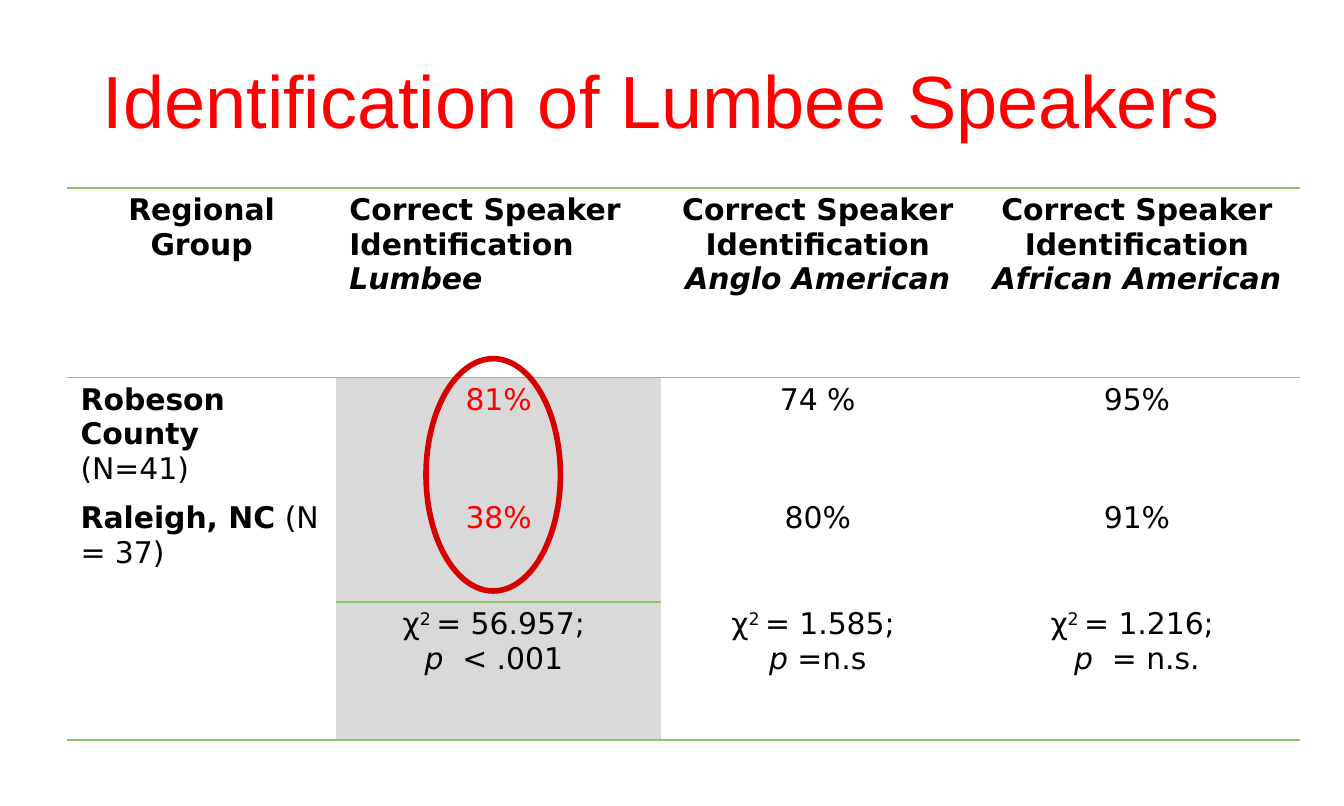
from lxml.etree import SubElement
from pptx import Presentation
from pptx.dml.color import RGBColor as RGB
from pptx.enum.shapes import MSO_SHAPE as SHAPE
from pptx.enum.text import MSO_ANCHOR as ANCHOR, MSO_AUTO_SIZE as AUTO, PP_ALIGN as ALIGN
from pptx.oxml import parse_xml
from pptx.oxml.ns import nsdecls, qn
from pptx.util import Pt

PX = 9144
COLORS = {"red": "FF0000", "ring": "D60000", "rule": "8DC765", "shade": "D9D9D9",
          "text": "000000", "page": "FFFFFF"}
COLS = [200, 242, 233, 242]
ROWS = [141, 88, 79, 103]
LUMBEE = 1


def heading(group):
    return [[("Correct Speaker Identification", "b")], [(group, "bi")]]


def share(text, style=""):
    return [[(text, style)]]


def chi_test(value, result):
    return [[("χ", ""), ("2 ", "^"), (f"= {value}; ", ""), ("\n", ""), ("p", "i"), (result, "")]]


CELLS = [
    [[[("Regional Group", "b")]], heading("Lumbee"), heading("Anglo American"),
     heading("African American")],
    [[[("Robeson County", "b"), ("\n", ""), ("(N=41)", "")]],
     share("81%", "r"), share("74 %"), share("95%")],
    [[[("Raleigh, NC", "b"), (" (N = 37)", "")]],
     share("38%", "r"), share("80%"), share("91%")],
    [[], chi_test("56.957", "  < .001 "), chi_test("1.585", " =n.s"),
     chi_test("1.216", "  = n.s.")],
]
LEFT_CELLS = {(0, 1), (1, 0), (2, 0)}


def color(name):
    return RGB.from_string(COLORS[name])


def place(sp, box):
    sp.left, sp.top, sp.width, sp.height = (v * PX for v in box)


def add_run(p, text, size, font, fill="text"):
    r = p.add_run()
    r.text = text
    r.font.size = Pt(size)
    r.font.name = font
    r.font.color.rgb = color(fill)
    return r


def add_title(s, box):
    sp = s.shapes.title
    place(sp, box)
    tf = sp.text_frame
    tf.word_wrap = True
    tf.auto_size = AUTO.NONE
    tf.vertical_anchor = ANCHOR.MIDDLE
    p = tf.paragraphs[0]
    p.alignment = ALIGN.CENTER
    add_run(p, "Identification of Lumbee Speakers ", 39.6, "Arial", "red")


def fill_text(cell, paragraphs, align):
    tf = cell.text_frame
    for i, runs in enumerate(paragraphs):
        p = tf.add_paragraph() if i else tf.paragraphs[0]
        p.alignment = align
        for text, style in runs:
            if text == "\n":
                p.add_line_break()
                continue
            r = add_run(p, text, 16, "DejaVu Sans", "red" if "r" in style else "text")
            r.font.bold = "b" in style
            r.font.italic = "i" in style
            if "^" in style:
                r.font._element.set("baseline", "30000")


def has_rule(edge, col):
    return edge in (0, 1, len(ROWS)) or (edge == 3 and col == LUMBEE)


def set_borders(cell, top, bottom):
    tc_pr = cell._tc.get_or_add_tcPr()
    sides = [("L", False), ("R", False), ("T", top), ("B", bottom)]
    for i, (side, shown) in enumerate(sides):
        ln = parse_xml(f'<a:ln{side} {nsdecls("a")} w="12700"/>')
        if shown:
            SubElement(SubElement(ln, qn("a:solidFill")), qn("a:srgbClr"), val=COLORS["rule"])
        else:
            SubElement(ln, qn("a:noFill"))
        tc_pr.insert(i, ln)


def add_results(s, box):
    frame = s.shapes.add_table(len(ROWS), len(COLS), *(v * PX for v in box))
    table = frame.table
    table.first_row = table.horz_banding = False
    for col, width in zip(table.columns, COLS):
        col.width = width * PX
    for row, height in zip(table.rows, ROWS):
        row.height = height * PX
    for r, row in enumerate(CELLS):
        for c, paragraphs in enumerate(row):
            cell = table.cell(r, c)
            cell.margin_left = cell.margin_right = 10 * PX
            cell.margin_top = cell.margin_bottom = 4 * PX
            if r and c == LUMBEE:
                cell.fill.solid()
                cell.fill.fore_color.rgb = color("shade")
            else:
                cell.fill.background()
            set_borders(cell, has_rule(r, c), has_rule(r + 1, c))
            fill_text(cell, paragraphs, ALIGN.LEFT if (r, c) in LEFT_CELLS else ALIGN.CENTER)


def add_ring(s, box):
    sp = s.shapes.add_shape(SHAPE.OVAL, *(v * PX for v in box))
    sp.shadow.inherit = False
    sp.fill.background()
    sp.line.color.rgb = color("ring")
    sp.line.width = Pt(3)


def main():
    prs = Presentation()
    prs.slide_width, prs.slide_height = 1000 * PX, 600 * PX
    s = prs.slides.add_slide(prs.slide_layouts[5])
    s.background.fill.solid()
    s.background.fill.fore_color.rgb = color("page")
    left, top = 50, 140
    add_title(s, (left, 24, 900, 100))
    add_results(s, (left, top, sum(COLS), sum(ROWS)))
    add_ring(s, (left + COLS[0] + 67, top + 127, 100, 173))
    prs.save("out.pptx")


if __name__ == "__main__":
    main()
